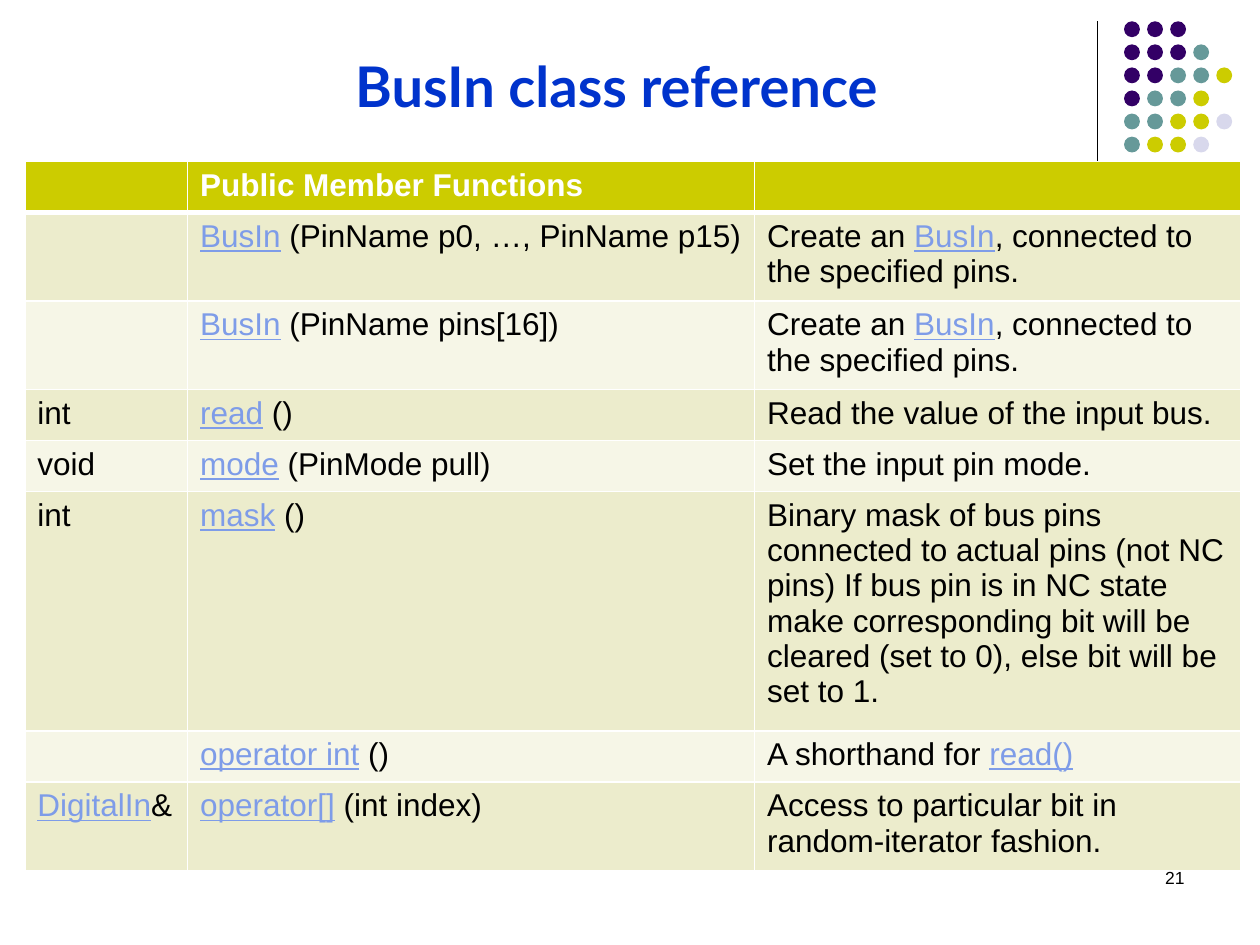
from dataclasses import dataclass

from lxml.etree import SubElement
from pptx import Presentation
from pptx.dml.color import RGBColor
from pptx.enum.shapes import MSO_CONNECTOR as Connector, MSO_SHAPE as Shape
from pptx.enum.text import MSO_AUTO_SIZE as AutoSize, PP_ALIGN as Align
from pptx.oxml.ns import qn
from pptx.util import Cm, Pt

TITLE = "BusIn class reference"
PAGE_NUMBER = "21"
LINK_MARK = "*"
FUNCTIONS = [
    ("", "Public Member Functions", ""),
    ("", "*BusIn* (PinName p0, …, PinName p15)",
     "Create an *BusIn*, connected to the specified pins."),
    ("", "*BusIn* (PinName pins[16])",
     "Create an *BusIn*, connected to the specified pins."),
    ("int", "*read* ()", "Read the value of the input bus."),
    ("void", "*mode* (PinMode pull)", "Set the input pin mode."),
    ("int", "*mask* ()",
     "Binary mask of bus pins connected to actual pins (not NC pins) "
     "If bus pin is in NC state make corresponding bit will be cleared "
     "(set to 0), else bit will be set to 1."),
    ("", "*operator int* ()", "A shorthand for *read()*"),
    ("*DigitalIn*&", "*operator[]* (int index)",
     "Access to particular bit in random-iterator fashion."),
]
COLUMN_WIDTHS = [3.28, 11.43, 9.8]
ROW_HEIGHT = 1.03
DOT_ROWS = ["PPP", "PPPT", "PPTTY", "PTTY", "TTYYL", "TYYL"]
DOT_COLORS = {"P": "330066", "T": "669999", "Y": "CCCC00", "L": "D8D8EC"}
DOT_LEFT, DOT_TOP, DOT_SIZE, DOT_PITCH = 22.66, 0.43, 0.32, 0.465


@dataclass(frozen=True)
class Theme:
    title_font: str = "Lato"
    body_font: str = "Arial"
    title_size: int = 32
    body_size: int = 18
    number_size: int = 10
    title: str = "0033CC"
    text: str = "000000"
    link: str = "7E9CE8"
    white: str = "FFFFFF"
    header: str = "CCCC00"
    bands: tuple = ("ECECCC", "F6F6E7")


THEME = Theme()


def color(value):
    return RGBColor.from_string(value)


def format_run(run, name, size, value, bold=False, underline=False):
    run.font.name = name
    run.font.size = Pt(size)
    run.font.color.rgb = color(value)
    run.font.bold = bold
    run.font.underline = underline


def add_dots(slide):
    for row, codes in enumerate(DOT_ROWS):
        for column, code in enumerate(codes):
            dot = slide.shapes.add_shape(
                Shape.OVAL,
                Cm(DOT_LEFT + column * DOT_PITCH), Cm(DOT_TOP + row * DOT_PITCH),
                Cm(DOT_SIZE), Cm(DOT_SIZE))
            dot.shadow.inherit = False
            dot.fill.solid()
            dot.fill.fore_color.rgb = color(DOT_COLORS[code])
            dot.line.fill.background()


def add_divider(slide):
    divider = slide.shapes.add_connector(
        Connector.STRAIGHT, Cm(22.12), Cm(0.43), Cm(22.12), Cm(4.65))
    divider.line.color.rgb = color(THEME.text)
    divider.line.width = Pt(0.75)
    SubElement(divider.element.spPr, qn("a:effectLst"))


def add_text(slide, text, box, name, size, value, bold=False):
    shape = slide.shapes.add_textbox(*map(Cm, box))
    shape.text_frame.text = text
    shape.text_frame.word_wrap = True
    paragraph = shape.text_frame.paragraphs[0]
    format_run(paragraph.runs[0], name, size, value, bold)
    return shape


def set_borders(cell, widths):
    properties = cell._tc.get_or_add_tcPr()
    for side, width in widths.items():
        border = SubElement(properties, qn(f"a:ln{side}"), w=str(Pt(width)))
        fill = SubElement(border, qn("a:solidFill"))
        SubElement(fill, qn("a:srgbClr"), val=THEME.white)


def fill_cell(cell, text, row):
    is_header = row == 0
    set_borders(cell, {"L": 1, "R": 1, "T": 3 if row == 1 else 1,
                       "B": 3 if is_header else 1})
    cell.fill.solid()
    cell.fill.fore_color.rgb = color(
        THEME.header if is_header else THEME.bands[(row - 1) % 2])
    paragraph = cell.text_frame.paragraphs[0]
    paragraph.font.size = Pt(THEME.body_size)
    for index, part in enumerate(text.split(LINK_MARK)):
        if part:
            is_link = index % 2 == 1
            run = paragraph.add_run()
            run.text = part
            value = THEME.link if is_link else THEME.text
            format_run(run, THEME.body_font, THEME.body_size,
                       THEME.white if is_header else value, is_header, is_link)


def add_function_table(slide):
    table = slide.shapes.add_table(
        len(FUNCTIONS), len(COLUMN_WIDTHS), Cm(0.5), Cm(3.26),
        Cm(sum(COLUMN_WIDTHS)), Cm(ROW_HEIGHT * len(FUNCTIONS))).table
    table.horz_banding = False
    for column, width in zip(table.columns, COLUMN_WIDTHS):
        column.width = Cm(width)
    for row, texts in enumerate(FUNCTIONS):
        table.rows[row].height = Cm(ROW_HEIGHT)
        for column, text in enumerate(texts):
            fill_cell(table.cell(row, column), text, row)


def main():
    presentation = Presentation()
    presentation.slide_width, presentation.slide_height = Cm(25.4), Cm(19.05)
    slide = presentation.slides.add_slide(presentation.slide_layouts[6])
    add_divider(slide)
    add_dots(slide)
    number = add_text(slide, PAGE_NUMBER, (18.2, 17.35, 5.93, 1.27),
                      THEME.body_font, THEME.number_size, THEME.text)
    number.text_frame.paragraphs[0].alignment = Align.RIGHT
    add_function_table(slide)
    title = add_text(slide, TITLE, (6.91, 0.91, 12.27, 1.63),
                     THEME.title_font, THEME.title_size, THEME.title, bold=True)
    title.text_frame.word_wrap = False
    title.text_frame.auto_size = AutoSize.SHAPE_TO_FIT_TEXT
    presentation.save("out.pptx")


if __name__ == "__main__":
    main()
